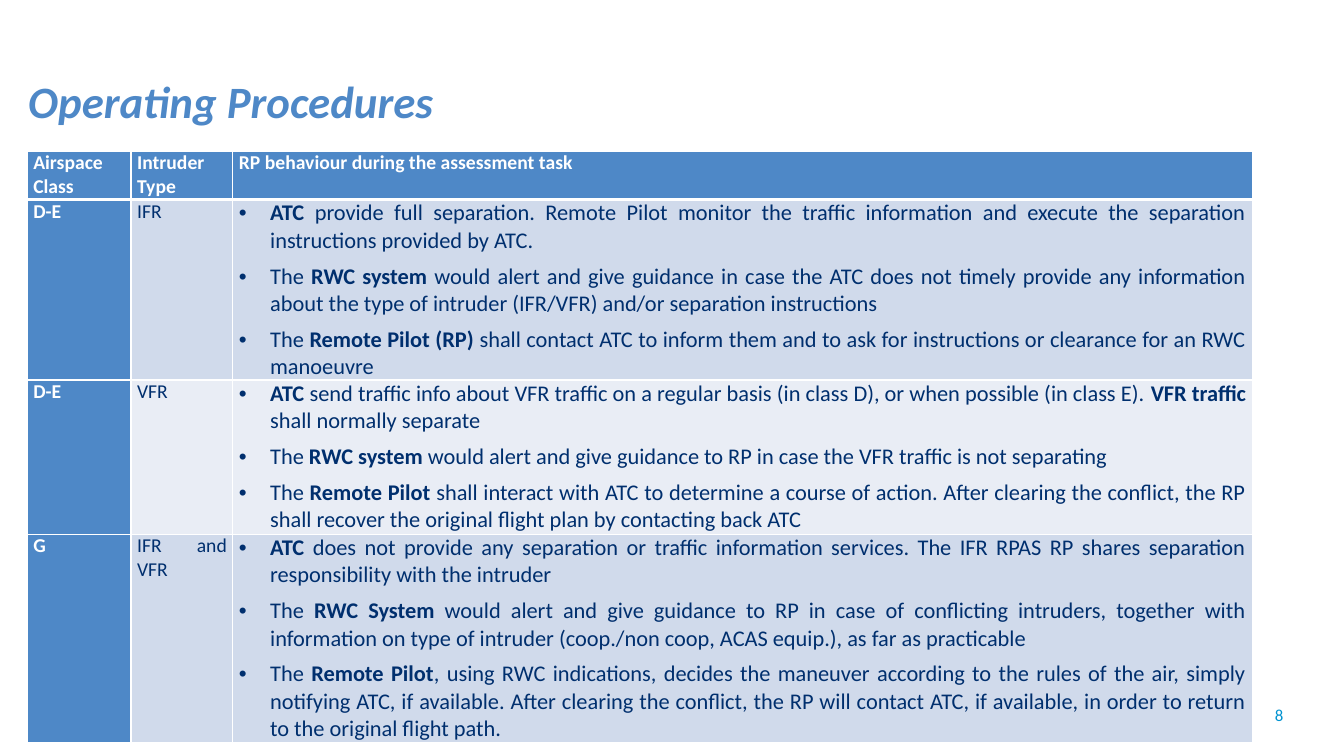
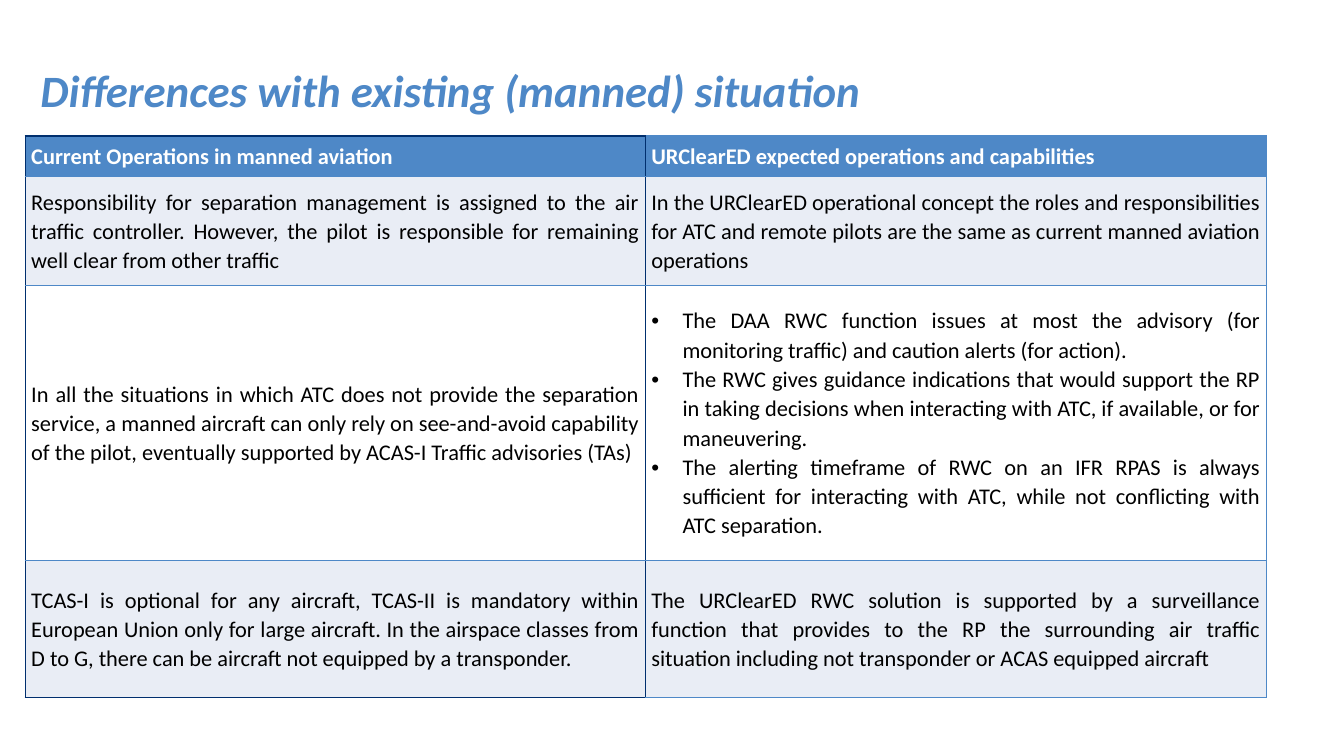
from lxml.etree import SubElement
from pptx import Presentation
from pptx.dml.color import RGBColor
from pptx.enum.text import MSO_ANCHOR, PP_ALIGN
from pptx.oxml.ns import qn
from pptx.util import Inches, Pt

BLUE = RGBColor(0x4E, 0x88, 0xC7)
NAVY = RGBColor(0x00, 0x2F, 0x6E)
CYAN = RGBColor(0x00, 0x93, 0xD1)
BAND = RGBColor(0xD0, 0xDA, 0xEB)
PALE = RGBColor(0xE9, 0xED, 0xF5)
WHITE = RGBColor(0xFF, 0xFF, 0xFF)
BLACK = RGBColor(0x00, 0x00, 0x00)
FONT = "Calibri"
INDENT = Inches(0.31)

PROCEDURES = [
    ("Airspace Class", "Intruder Type", "RP behaviour during the assessment task"),
    ("D-E", "IFR", [
        "**ATC** provide full separation. Remote Pilot monitor the traffic information and "
        "execute the separation instructions provided by ATC.",
        "The **RWC system **would alert and give guidance in case the ATC does not timely provide "
        "any information about the type of intruder (IFR/VFR) and/or separation instructions",
        "The **Remote Pilot (RP) **shall contact ATC to inform them and to ask for instructions "
        "or clearance for an RWC manoeuvre",
    ]),
    ("D-E", "VFR", [
        "**ATC** send traffic info about VFR traffic on a regular basis (in class D), or when "
        "possible (in class E). **VFR traffic **shall normally separate",
        "The **RWC system **would alert and give guidance to RP in case the VFR traffic is not "
        "separating",
        "The **Remote Pilot **shall interact with ATC to determine a course of action. After "
        "clearing the conflict, the RP shall recover the original flight plan by contacting back ATC",
    ]),
    ("G", "IFR and VFR", [
        "**ATC** does not provide any separation or traffic information services. The IFR RPAS RP "
        "shares separation responsibility with the intruder",
        "The **RWC System **would alert and give guidance to RP in case of conflicting intruders, "
        "together with information on type of intruder (coop./non coop, ACAS equip.), as far as "
        "practicable",
        "The **Remote Pilot**, using RWC indications, decides the maneuver according to the rules "
        "of the air, simply notifying ATC, if available. After clearing the conflict, the RP will "
        "contact ATC, if available, in order to return to the original flight path.",
    ]),
]

DIFFERENCES = [
    ("Current Operations in manned aviation", "URClearED expected operations and capabilities"),
    ("Responsibility for separation management is assigned to the air traffic controller. However, "
     "the pilot is responsible for remaining well clear from other traffic",
     "In the URClearED operational concept the roles and responsibilities for ATC and remote "
     "pilots are the same as current manned aviation operations"),
    ("In all the situations in which ATC does not provide the separation service, a manned "
     "aircraft can only rely on see-and-avoid capability of the pilot, eventually supported by "
     "ACAS-I Traffic advisories (TAs)", [
         "The DAA RWC function issues at most the advisory (for monitoring traffic) and caution "
         "alerts (for action).",
         "The RWC gives guidance indications that would support the RP in taking decisions when "
         "interacting with ATC, if available, or for maneuvering.",
         "The alerting timeframe of RWC on an IFR RPAS is always sufficient for interacting with "
         "ATC, while not conflicting with ATC separation.",
     ]),
    ("TCAS-I is optional for any aircraft, TCAS-II is mandatory within European Union only for "
     "large aircraft. In the airspace classes from D to G, there can be aircraft not equipped by "
     "a transponder.",
     "The URClearED RWC solution is supported by a surveillance function that provides to the RP "
     "the surrounding air traffic situation including not transponder or ACAS equipped aircraft"),
]


def write(tf, text, size=16, color=BLACK, bold=False, italic=False,
          align=PP_ALIGN.LEFT, after=0, spacing=None):
    bulleted = isinstance(text, list)
    for i, line in enumerate(text if bulleted else [text]):
        p = tf.add_paragraph() if i else tf.paragraphs[0]
        if bulleted:
            pPr = p._p.get_or_add_pPr()
            pPr.set("marL", str(INDENT))
            pPr.set("indent", str(-INDENT))
            SubElement(pPr, qn("a:buFont"), typeface="Arial")
            SubElement(pPr, qn("a:buChar"), char="•")
        p.alignment = align
        p.space_after = Pt(after)
        if spacing:
            p.line_spacing = spacing
        for n, part in enumerate(line.split("**")):
            if part:
                r = p.add_run()
                r.text = part
                r.font.name, r.font.size = FONT, Pt(size)
                r.font.bold, r.font.italic = bold or n % 2 == 1, italic
                r.font.color.rgb = color


def set_borders(cell, **sides):
    tcPr = cell._tc.get_or_add_tcPr()
    for side in "LRTB":
        color, width = sides[side]
        ln = SubElement(tcPr, qn("a:ln" + side), w=str(Pt(width)))
        fill = SubElement(ln, qn("a:solidFill"))
        SubElement(fill, qn("a:srgbClr"), val=str(color))


def add_titled_slide(prs, title, left, top, width, height):
    s = prs.slides.add_slide(prs.slide_layouts[5])
    sp = s.shapes.title
    sp.left, sp.top, sp.width, sp.height = map(Inches, (left, top, width, height))
    sp.text_frame.vertical_anchor = MSO_ANCHOR.MIDDLE
    write(sp.text_frame, title, size=32, color=BLUE, bold=True, italic=True, spacing=0.9)
    return s


def add_grid(s, rows, left, top, widths, heights, anchor, style):
    frame = s.shapes.add_table(len(rows), len(widths), Inches(left), Inches(top),
                               Inches(sum(widths)), Inches(sum(heights)))
    table = frame.table
    for column, width in zip(table.columns, widths):
        column.width = Inches(width)
    for i, (row, height) in enumerate(zip(rows, heights)):
        table.rows[i].height = Inches(height)
        for j, text in enumerate(row):
            cell = table.cell(i, j)
            fill, borders, text_format = style(i, j)
            set_borders(cell, **borders)
            cell.fill.solid()
            cell.fill.fore_color.rgb = fill
            cell.margin_left = cell.margin_right = Inches(0.06)
            cell.margin_top = cell.margin_bottom = 0
            cell.vertical_anchor = anchor
            write(cell.text_frame, text, **text_format)


def procedure_style(i, j):
    heading = i == 0 or j == 0
    fill = BLUE if heading else BAND if i % 2 else PALE
    borders = dict.fromkeys("LR", (WHITE, 1))
    borders["T"] = (WHITE, 3 if i == 1 else 1)
    borders["B"] = (WHITE, 3 if i == 0 else 1)
    behaviour = i > 0 and j == 2
    return fill, borders, dict(
        size=16 if behaviour else 14, color=WHITE if heading else NAVY, bold=heading,
        align=PP_ALIGN.JUSTIFY, after=6 if behaviour else 10)


def difference_style(i, j):
    fill = BLUE if i == 0 else PALE if i % 2 else WHITE
    borders = dict.fromkeys("LRTB", (BLUE, 1))
    borders["L"] = (NAVY, 1)
    if j == 0:
        borders["R"] = (NAVY, 1)
        if i == 0:
            borders["T"] = (NAVY, 1)
        if i == len(DIFFERENCES) - 1:
            borders["B"] = (NAVY, 1)
    return fill, borders, dict(
        color=BLACK if i else WHITE, bold=i == 0, spacing=1.07,
        align=PP_ALIGN.JUSTIFY if i else PP_ALIGN.LEFT)


def add_page_number(s, number):
    tf = s.shapes.add_textbox(Inches(9.73), Inches(6.99), Inches(3), Inches(0.26)).text_frame
    tf.word_wrap = True
    tf.margin_left = tf.margin_right = tf.margin_top = tf.margin_bottom = 0
    write(tf, number, size=12, color=CYAN, align=PP_ALIGN.RIGHT)


def main():
    prs = Presentation()
    prs.slide_width, prs.slide_height = Inches(13.33), Inches(7.5)

    s = add_titled_slide(prs, "Operating Procedures", 0.18, 0.68, 8.81, 0.7)
    add_page_number(s, "8")
    add_grid(s, PROCEDURES, 0.27, 1.5, (1.03, 1.01, 10.11), (0.48, 1.79, 1.53, 2.07),
             MSO_ANCHOR.TOP, procedure_style)

    s = add_titled_slide(prs, "Differences with existing (manned) situation",
                         0.3, 0.58, 8.95, 0.69)
    add_grid(s, DIFFERENCES, 0.25, 1.35, (6.15, 6.16), (0.4, 1.08, 2.73, 1.36),
             MSO_ANCHOR.MIDDLE, difference_style)

    prs.save("out.pptx")


if __name__ == "__main__":
    main()
